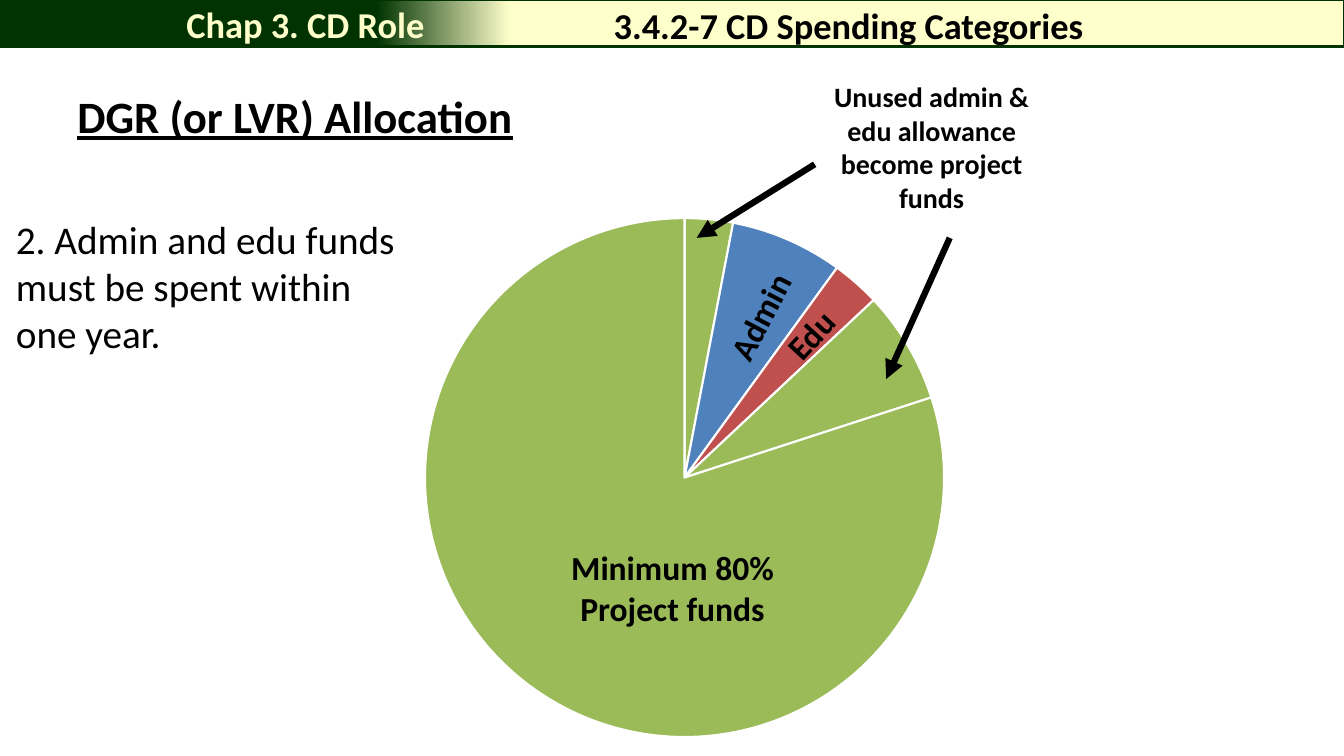
from lxml.etree import SubElement
from pptx import Presentation
from pptx.chart.data import CategoryChartData
from pptx.dml.color import RGBColor
from pptx.enum.chart import XL_CHART_TYPE
from pptx.enum.shapes import MSO_CONNECTOR, MSO_SHAPE
from pptx.enum.text import MSO_ANCHOR, PP_ALIGN
from pptx.oxml import parse_xml
from pptx.oxml.ns import nsdecls, qn
from pptx.util import Pt

PX = 9144  # EMU per px, 100 px to the inch
SLIDE_WIDTH, SLIDE_HEIGHT = 1333, 750
FONT = "Calibri"
COLORS = {
    "text": "000000",
    "banner_dark": "003300",
    "banner_light": "FFFFCC",
    "project": "9BBB59",
    "admin": "4F81BD",
    "edu": "C0504D",
    "divider": "FFFFFF",
}
# Category, value and color of each slice, clockwise from the top
SLICES = [
    ("1", 3, "project"),
    ("2", 7, "admin"),
    ("3", 3, "edu"),
    ("4", 7, "project"),
    ("5", 80, "project"),
]


def color(name):
    return RGBColor.from_string(COLORS[name])


def emu(*lengths):
    return [length * PX for length in lengths]


def add_text(slide, box, text, size, bold=True, underline=False, fill="text",
             align=PP_ALIGN.CENTER, anchor=MSO_ANCHOR.TOP, rotation=0):
    shape = slide.shapes.add_textbox(*emu(*box))
    shape.rotation = rotation
    frame = shape.text_frame
    frame.word_wrap = True
    frame.vertical_anchor = anchor
    paragraph = frame.paragraphs[0]
    paragraph.alignment = align
    run = paragraph.add_run()
    run.text = text
    font = run.font
    font.name, font.size = FONT, Pt(size)
    font.bold, font.underline = bold, underline
    font.color.rgb = color(fill)


def add_arrow(slide, start, end):
    arrow = slide.shapes.add_connector(MSO_CONNECTOR.STRAIGHT, *emu(*start, *end))
    arrow.line.color.rgb = color("text")
    arrow.line.width = Pt(4.5)
    SubElement(arrow.line._get_or_add_ln(), qn("a:tailEnd"), type="triangle")
    SubElement(arrow._element.spPr, qn("a:effectLst"))


def add_banner(slide, left, top, width, height):
    banner = slide.shapes.add_shape(MSO_SHAPE.RECTANGLE, *emu(left, top, width, height))
    banner.shadow.inherit = False
    banner.fill.gradient()
    banner.fill.gradient_angle = 0
    stops = [(0.28, "banner_dark"), (0.38, "banner_light")]
    for stop, (position, name) in zip(banner.fill.gradient_stops, stops):
        stop.position = position
        stop.color.rgb = color(name)
    banner.line.color.rgb = color("banner_dark")
    banner.line.width = Pt(2)

    # Chapter and section titles
    add_text(slide, (left + 175, top - 1, 358, 50), "Chap 3. CD Role", 26,
             fill="banner_light", align=PP_ALIGN.LEFT, anchor=MSO_ANCHOR.MIDDLE)
    add_text(slide, (left + 517, top, 650, 50), "3.4.2-7 CD Spending Categories", 26,
             anchor=MSO_ANCHOR.MIDDLE)


def add_notes_column(slide, left, top, width, height):
    add_text(slide, (left + 61, top, 600, 70), "DGR (or LVR) Allocation", 32,
             underline=True, align=PP_ALIGN.LEFT)
    add_text(slide, (left, top + 126, width, height - 126),
             "2. Admin and edu funds must be spent within one year.", 28,
             bold=False, align=PP_ALIGN.LEFT)


def add_allocation_pie(slide, left, top, width, height):
    data = CategoryChartData()
    data.categories = [category for category, _, _ in SLICES]
    data.add_series("Series 1", [value for _, value, _ in SLICES])
    chart = slide.shapes.add_chart(
        XL_CHART_TYPE.PIE, *emu(left, top, width, height), data).chart
    chart.has_legend = chart.has_title = False
    chart.font.name, chart.font.size = FONT, Pt(10)
    chart.font.color.rgb = color("text")
    plot = chart.plots[0]
    plot.vary_by_categories = True
    for index, (_, _, name) in enumerate(SLICES):
        point = plot.series[0].points[index].format
        point.fill.solid()
        point.fill.fore_color.rgb = color(name)
        point.line.color.rgb = color("divider")
        point.line.width = Pt(1.5)

    # Fixed plot area inside the chart frame
    plot_area = chart._chartSpace.chart.plotArea
    for layout in plot_area.findall(qn("c:layout")):
        plot_area.remove(layout)
    plot_area.insert(0, parse_xml(
        f'<c:layout {nsdecls("c")}><c:manualLayout>'
        '<c:layoutTarget val="inner"/><c:xMode val="edge"/><c:yMode val="edge"/>'
        '<c:x val="0.2"/><c:y val="0.025"/><c:w val="0.6"/><c:h val="0.944"/>'
        '</c:manualLayout></c:layout>'))

    # Slice labels
    add_text(slide, (left + 301, top + 336, 232, 91), "Minimum 80% Project funds", 24)
    add_text(slide, (left + 400, top + 87, 207, 50), "Admin", 24, rotation=297.6)
    add_text(slide, (left + 433, top + 105, 241, 50), "Edu", 24, rotation=312.7)


def add_callout(slide, left, top, width, height):
    add_text(slide, (left, top, width, height),
             "Unused admin & edu allowance become project funds", 20)
    arrow_y = top + 162
    add_arrow(slide, (left + 13, top + 89), (left - 104, arrow_y))
    add_arrow(slide, (left + 147, arrow_y), (left + 84, arrow_y + 140))


def main():
    presentation = Presentation()
    presentation.slide_width, presentation.slide_height = emu(SLIDE_WIDTH, SLIDE_HEIGHT)
    slide = presentation.slides.add_slide(presentation.slide_layouts[6])
    add_banner(slide, 0, 0, SLIDE_WIDTH, 46)
    add_allocation_pie(slide, 250, 202, 858, 547)
    add_notes_column(slide, 6, 83, 417, 634)
    add_callout(slide, 795, 74, 258, 145)
    presentation.save("out.pptx")


if __name__ == "__main__":
    main()
